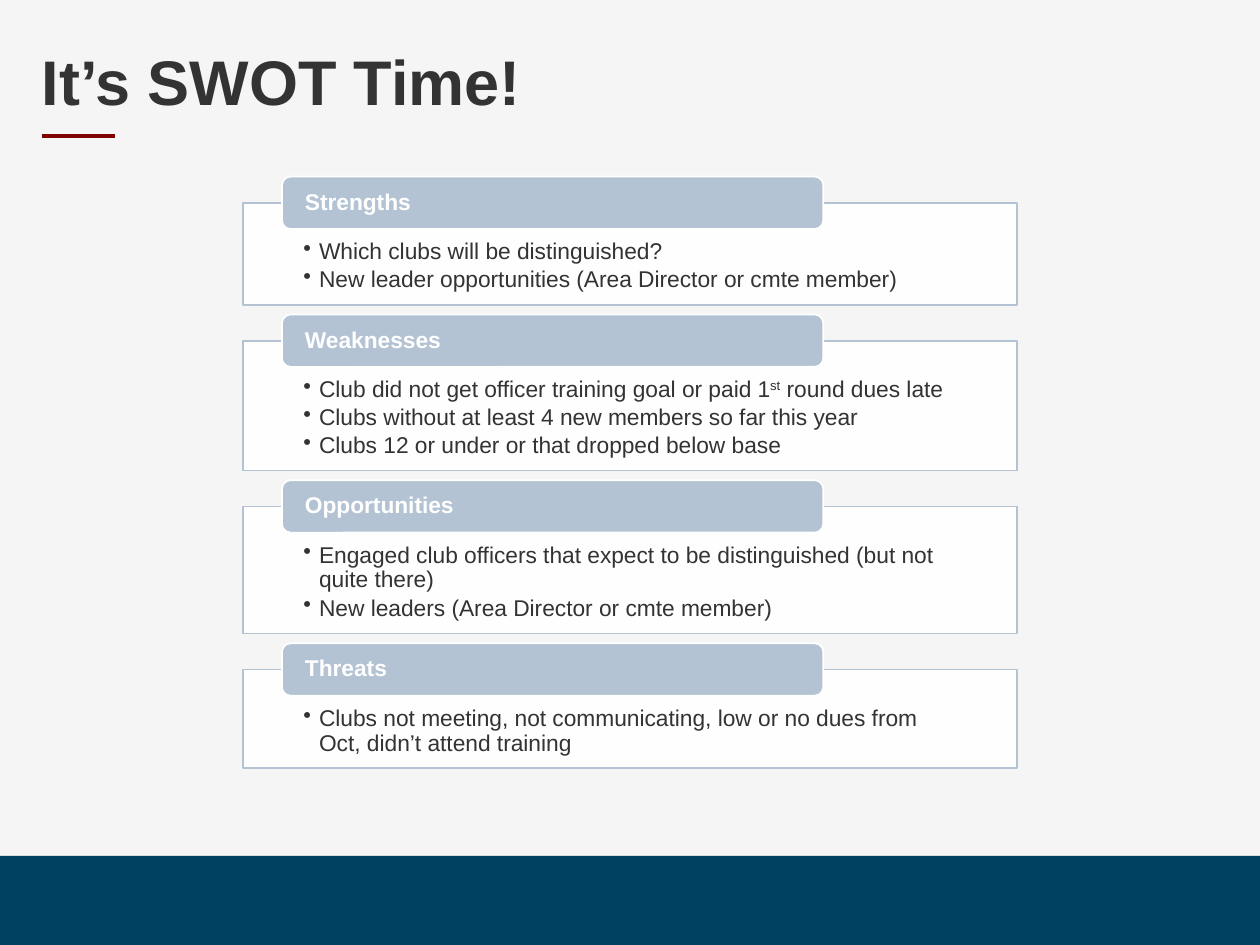
"""Build the SWOT slide with four titled bullet panels."""
import pptx
import pptx.dml.color
import pptx.enum.shapes
import pptx.enum.text
import pptx.oxml.ns
import pptx.util
from lxml import etree

Pt = pptx.util.Pt
SHAPE = pptx.enum.shapes.MSO_SHAPE
ANCHOR = pptx.enum.text.MSO_ANCHOR
LEFT = pptx.enum.text.PP_ALIGN.LEFT
qn = pptx.oxml.ns.qn

SECTIONS = [
    ("Strengths", 58.3, [
        ["Which clubs will be distinguished?"],
        ["New leader opportunities (Area Director or cmte member)"]]),
    ("Weaknesses", 74.2, [
        ["Club did not get officer training goal or paid 1", "st", " round dues late"],
        ["Clubs without at least 4 new members so far this year"],
        ["Clubs 12 or under or that dropped below base"]]),
    ("Opportunities", 72.7, [
        ["Engaged club officers that expect to be distinguished (but not quite there)"],
        ["New leaders (Area Director or cmte member)"]]),
    ("Threats", 56.2, [
        ["Clubs not meeting, not communicating, low or no dues from Oct, "
         "didn’t attend training"]]),
]


def rgb(color):
    return pptx.dml.color.RGBColor.from_string(color)


def assign(obj, values):
    for name, value in values.items():
        setattr(obj, name, value)


class Deck:
    INK, PALE, WHITE = "333333", "B3C3D3", "FFFFFF"
    NAVY, MAROON, PAPER = "004061", "800000", "F5F5F5"
    FONT, SIZE = "Arial", 13

    def __init__(self, prs):
        self.s = prs.slides.add_slide(prs.slide_layouts[5])
        fill = self.s.background.fill
        fill.solid()
        fill.fore_color.rgb = rgb(self.PAPER)

    def style(self, font, size, color, bold=False):
        assign(font, {"name": self.FONT, "size": Pt(size), "bold": bold})
        font.color.rgb = rgb(color)

    def frame(self, sp, anchor, left=0, top=0, right=0, bottom=0):
        tf = sp.text_frame
        assign(tf, {"word_wrap": True, "vertical_anchor": anchor,
                    "margin_left": Pt(left), "margin_top": Pt(top),
                    "margin_right": Pt(right), "margin_bottom": Pt(bottom)})
        return tf

    def paragraph(self, p, texts, size, color, bold=False, after=0):
        assign(p, {"alignment": LEFT, "line_spacing": 0.9, "space_after": Pt(after)})
        for text in texts:
            r = p.add_run()
            r.text = text
            self.style(r.font, size, color, bold)
            if text == "st":
                r.font._element.set("baseline", "30000")

    def box(self, kind, x, y, w, h, fill, line=None, alpha=None):
        sp = self.s.shapes.add_shape(kind, Pt(x), Pt(y), Pt(w), Pt(h))
        sp.shadow.inherit = False
        sp.fill.solid()
        sp.fill.fore_color.rgb = rgb(fill)
        if alpha:
            clr = sp._element.spPr.find(qn("a:solidFill")).find(qn("a:srgbClr"))
            etree.SubElement(clr, qn("a:alpha")).set("val", str(alpha * 1000))
        if line:
            sp.line.color.rgb = rgb(line)
            sp.line.width = Pt(1)
        else:
            sp.line.fill.background()
        return sp

    def rule(self, x1, x2, y):
        cn = self.s.shapes.add_connector(
            pptx.enum.shapes.MSO_CONNECTOR.STRAIGHT, Pt(x1), Pt(y), Pt(x2), Pt(y))
        cn.line.color.rgb = rgb(self.MAROON)
        cn.line.width = Pt(2.25)
        etree.SubElement(cn._element.spPr, qn("a:effectLst"))

    def title(self, text):
        sp = self.s.shapes.title
        assign(sp, {"left": Pt(16.6), "top": Pt(23), "width": Pt(687.6), "height": Pt(51)})
        tf = self.frame(sp, ANCHOR.MIDDLE, 7.2, 3.6, 7.2, 3.6)
        self.paragraph(tf.paragraphs[0], [text], 36, self.INK, True)

    def panel(self, y, h, items):
        sp = self.box(SHAPE.RECTANGLE, 139, y, 442, h, self.WHITE, self.PALE, 90)
        tf = self.frame(sp, ANCHOR.TOP, 34.3, 21.3, 34.3, 6.9)
        for i, texts in enumerate(items):
            p = tf.add_paragraph() if i else tf.paragraphs[0]
            pPr = p._p.get_or_add_pPr()
            pPr.set("marL", str(Pt(9)))
            pPr.set("indent", str(-Pt(9)))
            etree.SubElement(pPr, qn("a:buChar")).set("char", "•")
            self.paragraph(p, texts, self.SIZE, self.INK, after=2)

    def tab(self, y, text):
        sp = self.box(SHAPE.ROUNDED_RECTANGLE, 161.1, y, 309.4, 30, self.PALE, self.WHITE)
        tf = self.frame(sp, ANCHOR.MIDDLE, 11.7, 0, 11.7)
        self.paragraph(tf.paragraphs[0], [text], self.SIZE, self.WHITE, True)


def main():
    prs = pptx.Presentation()
    assign(prs, {"slide_width": Pt(720), "slide_height": Pt(540)})
    deck = Deck(prs)
    deck.box(SHAPE.RECTANGLE, 0, 489, 720, 51, deck.NAVY)
    deck.rule(24, 65.8, 77.6)
    deck.title("It’s SWOT Time!")
    y, gap = 115.9, 20.5
    for name, height, items in SECTIONS:
        deck.panel(y, height, items)
        deck.tab(y - 15, name)
        y += height + gap
    prs.save("out.pptx")


if __name__ == "__main__":
    main()
